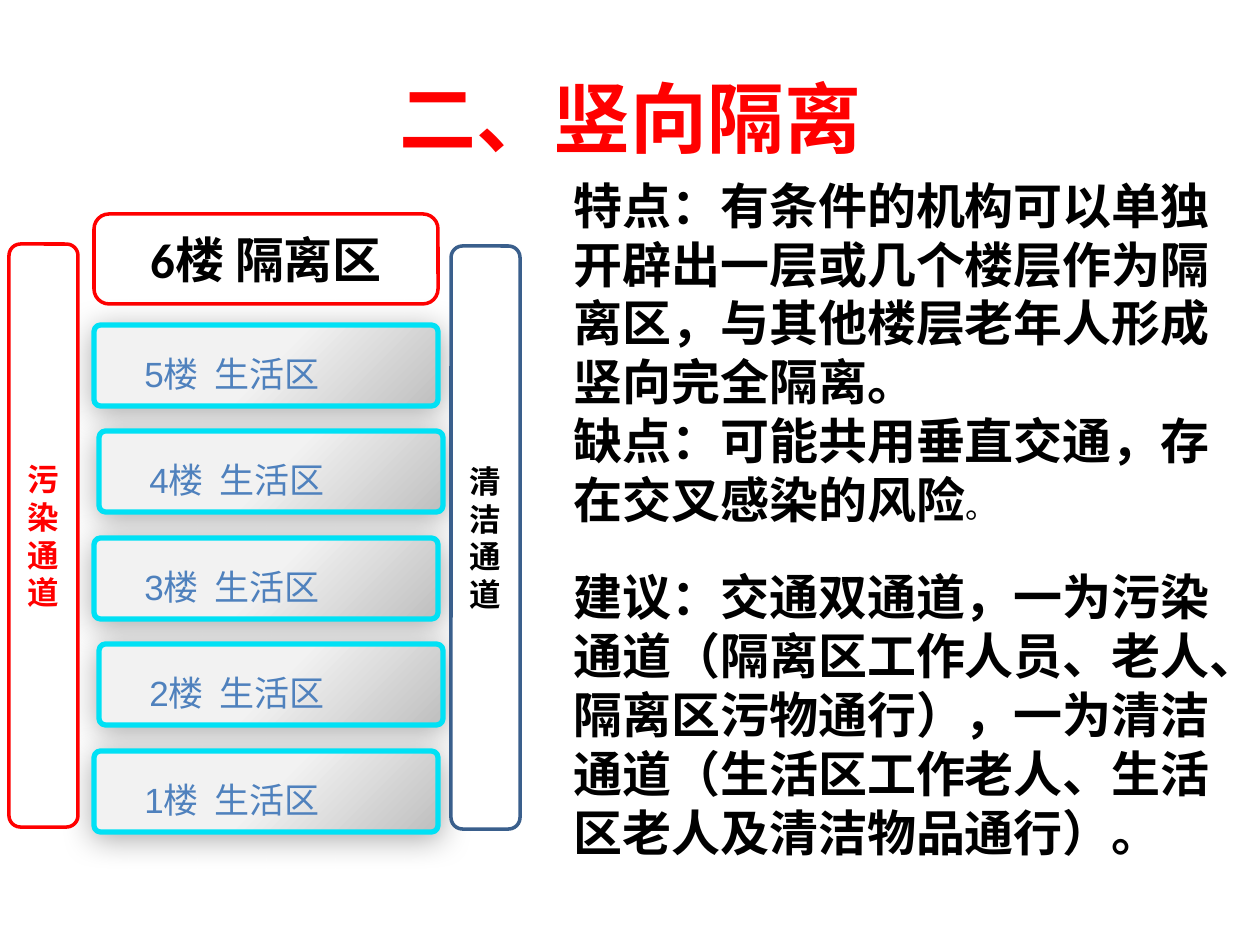
import pptx
import pptx.util
import pptx.dml.color
import pptx.enum.shapes
import pptx.enum.text
import pptx.oxml
import pptx.oxml.ns

ROUND = pptx.enum.shapes.MSO_SHAPE.ROUNDED_RECTANGLE
ALIGN = pptx.enum.text.PP_ALIGN
ANCHOR = pptx.enum.text.MSO_ANCHOR
SHADOW = (
    '<a:outerShdw %s blurRad="226000" dist="38100" dir="5220000" algn="ctr" rotWithShape="0">'
    '<a:srgbClr val="000000"><a:alpha val="33000"/></a:srgbClr></a:outerShdw>'
    % pptx.oxml.ns.nsdecls("a")
)


def px(n):
    return pptx.util.Emu(round(n * 914400 / 126))


def tint(code):
    return pptx.dml.color.RGBColor.from_string(code)


def write(para, text, size=28, font="Arial", color="000000", bold=True, align=ALIGN.LEFT):
    para.alignment = align
    run = para.add_run()
    run.text = text
    run.font.size = pptx.util.Pt(size)
    run.font.name = font
    run.font.bold = bold
    run.font.color.rgb = tint(color)


def place(shape, left, top, width, height):
    shape.left, shape.top = px(left), px(top)
    shape.width, shape.height = px(width), px(height)


def frame(shapes, box, line, width):
    shape = shapes.add_shape(ROUND, *map(px, box))
    shape.shadow.inherit = False
    shape.line.color.rgb = tint(line)
    shape.line.width = pptx.util.Pt(width)
    return shape


def panel(shapes, box, text, line, color, size):
    shape = frame(shapes, box, line, 2)
    shape.fill.solid()
    shape.fill.fore_color.rgb = tint("FFFFFF")
    text_frame = shape.text_frame
    text_frame.word_wrap = True
    text_frame.vertical_anchor = ANCHOR.MIDDLE
    write(text_frame.paragraphs[0], text, size=size, font="Calibri", color=color,
          align=ALIGN.CENTER)


def floor(shapes, left, top, text):
    group = shapes.add_group_shape()
    bar = frame(group.shapes, (left, top, 344, 81), "00E1F5", 3)
    bar.adjustments[0] = 0.08
    bar.fill.gradient()
    bar.fill.gradient_angle = 315
    for stop, spot, code in zip(bar.fill.gradient_stops, (0.5, 1), ("F2F2F2", "BFBFBF")):
        stop.position = spot
        stop.color.rgb = tint(code)
    effect = bar._element.spPr.find(pptx.oxml.ns.qn("a:effectLst"))
    effect.append(pptx.oxml.parse_xml(SHADOW))
    label = group.shapes.add_textbox(px(left + 38), px(top + 21), px(344), px(55))
    label.text_frame.word_wrap = True
    write(label.text_frame.paragraphs[0], text, size=20, color="4F81BD", bold=False)


def plain(para, before=0):
    props = para._p.get_or_add_pPr()
    props.set("marL", "0")
    props.set("indent", "0")
    props.append(pptx.oxml.parse_xml("<a:buNone %s/>" % pptx.oxml.ns.nsdecls("a")))
    para.space_before = pptx.util.Pt(before)


def notes(body):
    place(body, 561, 169, 703, 780)
    text_frame = body.text_frame
    text_frame.auto_size = pptx.enum.text.MSO_AUTO_SIZE.NONE
    text_frame.word_wrap = True
    items = (
        ("特点：有条件的机构可以单独开辟出一层或几个楼层作为隔离区，与其他楼层老年人形成竖向完全隔离。", 0),
        ("缺点：可能共用垂直交通，存在交叉感染的风险", 0),
        ("建议：交通双通道，一为污染通道（隔离区工作人员、老人、隔离区污物通行），"
         "一为清洁通道（生活区工作老人、生活区老人及清洁物品通行）。", 22),
    )
    for i, (text, before) in enumerate(items):
        para = text_frame.add_paragraph() if i else text_frame.paragraphs[0]
        plain(para, before)
        write(para, text)
    write(text_frame.paragraphs[1], "。", size=18, bold=False)


def main():
    deck = pptx.Presentation()
    deck.slide_width, deck.slide_height = px(1260), px(945)
    slide = deck.slides.add_slide(deck.slide_layouts[1])
    shapes = slide.shapes
    title = shapes.title
    place(title, 178, 38, 906, 158)
    title.text_frame.vertical_anchor = ANCHOR.MIDDLE
    write(title.text_frame.paragraphs[0], "二、竖向隔离", size=44, font="Calibri",
          color="FF0000", align=ALIGN.CENTER)
    notes(slide.placeholders[1])
    panel(shapes, (94, 214, 344, 90), "6楼 隔离区", "FF0000", "000000", 28)
    for i in range(5):
        floor(shapes, 94 + 5 * (i % 2), 325 + i * 213 // 2, f"{5 - i}楼  生活区")
    panel(shapes, (9, 244, 69, 583), "污染通道", "FF0000", "FF0000", 18)
    panel(shapes, (451, 246, 69, 583), "清洁通道", "3A5F8C", "000000", 18)
    deck.save("out.pptx")


if __name__ == "__main__":
    main()
